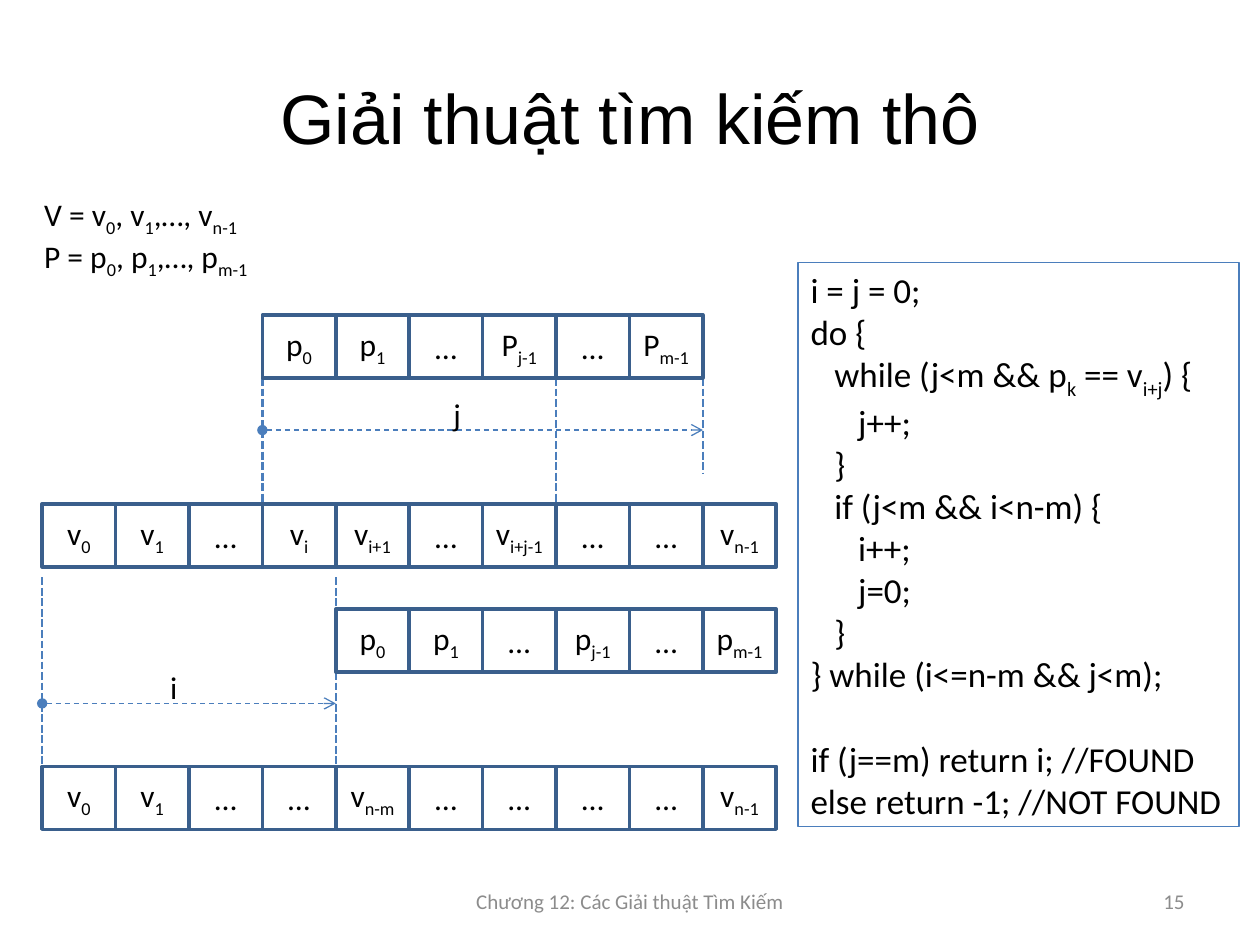
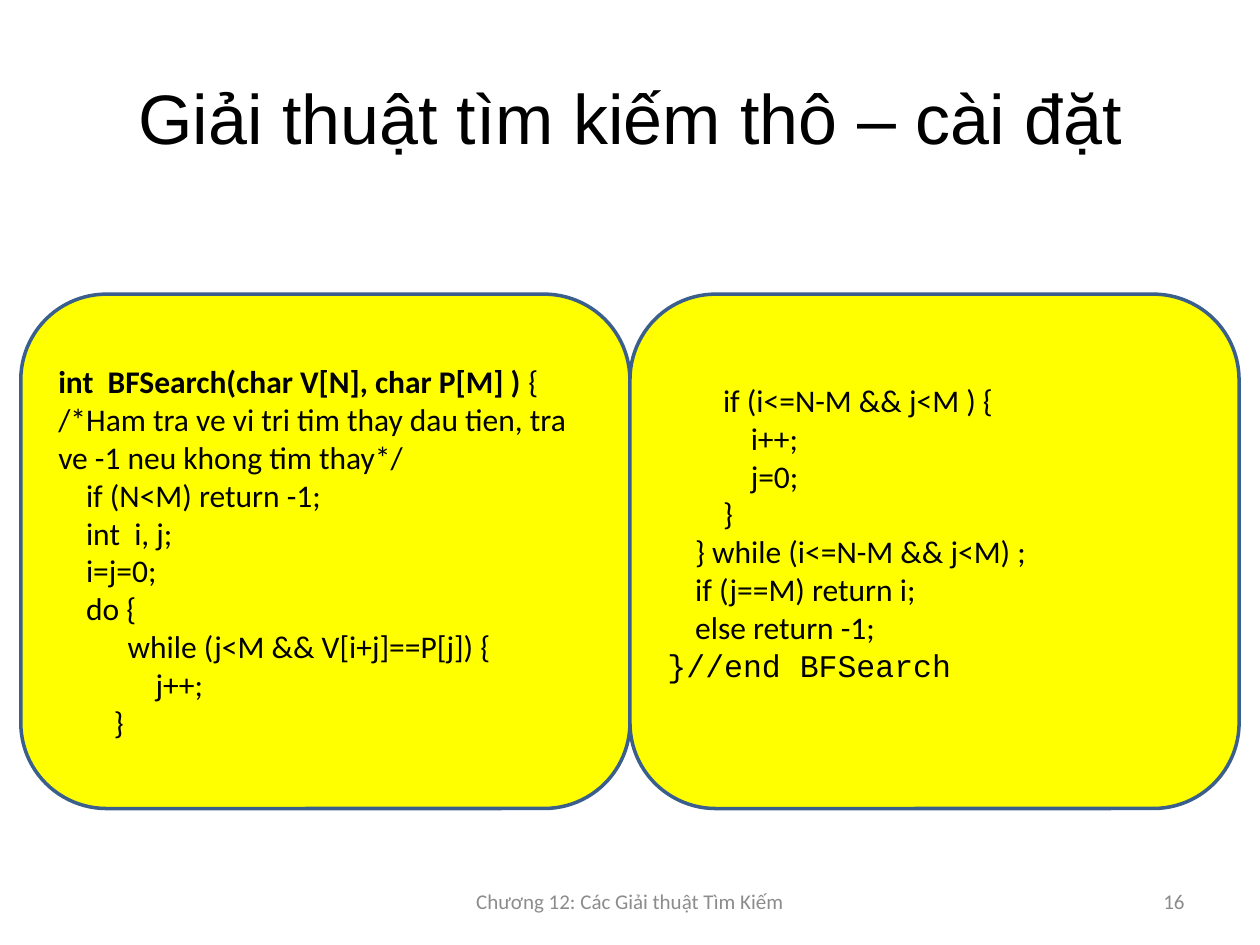
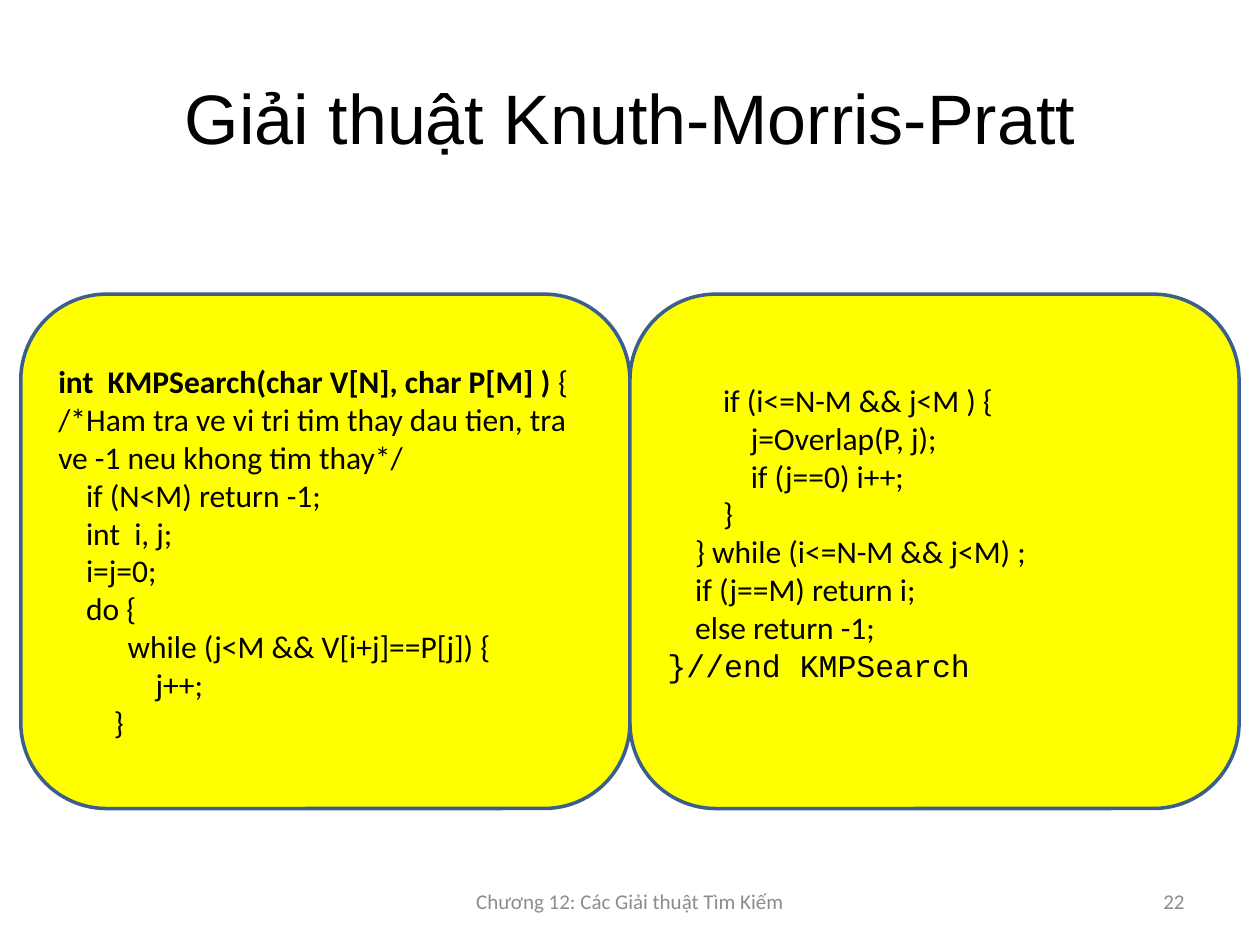
from dataclasses import dataclass

from lxml import etree
from pptx import Presentation
from pptx.dml.color import RGBColor
from pptx.enum import dml, shapes, text
from pptx.oxml import ns
from pptx.util import Cm, Pt


@dataclass(frozen=True)
class Theme:
    ink: str = "000000"
    muted: str = "8C8C8C"
    border: str = "3A5F8C"
    guide: str = "4B7EBC"
    panel: str = "FFFF00"
    title_font: str = "Arial"
    body_font: str = "Calibri"
    code_font: str = "Courier New"
    title_size: int = 40
    code_size: int = 20
    body_size: int = 18
    footer_size: int = 12


T = Theme()
LEFT, CENTER, RIGHT = text.PP_ALIGN.LEFT, text.PP_ALIGN.CENTER, text.PP_ALIGN.RIGHT
TOP, MIDDLE = text.MSO_ANCHOR.TOP, text.MSO_ANCHOR.MIDDLE
DASH, SYS_DASH = dml.MSO_LINE.DASH, dml.MSO_LINE.SQUARE_DOT

# Content: text between ~ marks is subscript, code lines are (indent, text)
FOOTER = "Chương 12: Các Giải thuật Tìm Kiếm"
DEFINITIONS = ["V = v~0~, v~1~,…, v~n-1~", "P = p~0~, p~1~,…, p~m-1~"]

# Array rows: (first column, top, cells)
ARRAYS = [
    (3, 6.35, ["p~0~", "p~1~", "…", "P~j-1~", "…", "P~m-1~"]),
    (0, 10.16, ["v~0~", "v~1~", "…", "v~i~", "v~i+1~", "…", "v~i+j-1~", "…", "…", "v~n-1~"]),
    (4, 12.28, ["p~0~", "p~1~", "…", "p~j-1~", "…", "p~m-1~"]),
    (0, 15.45, ["v~0~", "v~1~", "…", "…", "v~n-m~", "…", "…", "…", "…", "v~n-1~"]),
]
# Guides: (column, top, bottom); spans: (from column, to column, y)
GUIDES = [(3, 7.62, 10.16), (7, 7.62, 10.16), (9, 7.62, 9.53),
          (0, 11.64, 15.45), (4, 11.64, 15.45)]
SPANS = [(3, 9, 8.67), (0, 4, 14.18)]
SPAN_LABELS = [("j", 8.89, 7.83), ("i", 3.18, 13.34)]

PSEUDOCODE = [
    (0, "i = j = 0;"), (0, "do {"),
    (3, "while (j<m && p~k~ == v~i+j~) {"), (6, "j++;"), (3, "}"),
    (3, "if (j<m && i<n-m) {"), (6, "i++;"), (6, "j=0;"), (3, "}"),
    (0, "} while (i<=n-m && j<m);"),
]
RESULT = [(0, "if (j==m) return i; //FOUND"), (0, "else return -1; //NOT FOUND")]

SEARCH_START = [
    (0, "/*Ham tra ve vi tri tim thay dau tien, tra ve -1 neu khong tim thay*/"),
    (4, "if (N<M) return -1;"), (4, "int  i, j;"), (4, "i=j=0;"), (4, "do {"),
    (10, "while (j<M && V[i+j]==P[j]) {"), (14, "j++;"), (8, "}"),
]
SEARCH_END = [(8, "}"), (4, "} while (i<=N-M && j<M) ;"),
              (4, "if (j==M) return i;"), (4, "else return -1;")]
# Code slides: (title, number, function, lines that shift the pattern)
SEARCHES = [
    ("Giải thuật tìm kiếm thô – cài đặt", 16, "BFSearch", ["i++;", "j=0;"]),
    ("Giải thuật Knuth-Morris-Pratt", 22, "KMPSearch",
     ["j=Overlap(P, j);", "if (j==0) i++;"]),
]

# Layout in centimetres
COL_X, CELL_W, CELL_H = 0.85, 1.48, 1.27
PANEL_X, PANEL_Y, PANEL_W, PANEL_H = 0.42, 5.93, 12.28, 10.37
INDENT = {T.body_size: 0.14, T.code_size: 0.16}
BLANK_LINE = {T.body_size: 0.77, T.code_size: 0.86}


def column(n):
    return COL_X + n * CELL_W


# Text helpers
def add_run(p, words, size, color=T.ink, font=T.body_font, bold=False, sub=False):
    r = p.add_run()
    r.text = words
    for name, value in dict(size=Pt(size), name=font, bold=bold).items():
        setattr(r.font, name, value)
    r.font.color.rgb = RGBColor.from_string(color)
    if sub:
        r._r.get_or_add_rPr().set("baseline", "-25000")


def add_marked(p, marked, size, **fmt):
    for n, part in enumerate(marked.split("~")):
        if part:
            add_run(p, part, size, sub=n % 2 == 1, **fmt)


def next_paragraph(tf, align=LEFT):
    p = tf.paragraphs[0] if not tf.paragraphs[0].runs else tf.add_paragraph()
    p.alignment = align
    return p


def write_code(tf, lines, size):
    for indent, line in lines:
        p = next_paragraph(tf)
        p._p.get_or_add_pPr().set("marL", str(Cm(indent * INDENT[size])))
        add_marked(p, line, size)


def add_text(s, box, words, size=T.body_size, align=LEFT, anchor=TOP, **fmt):
    tf = s.shapes.add_textbox(*map(Cm, box)).text_frame
    tf.word_wrap, tf.vertical_anchor = True, anchor
    add_marked(next_paragraph(tf, align), words, size, **fmt)


# Shape helpers
def add_box(s, box, kind=shapes.MSO_SHAPE.RECTANGLE, fill=None, line=T.border,
            width=2, anchor=MIDDLE):
    sp = s.shapes.add_shape(kind, *map(Cm, box))
    sp.shadow.inherit = False
    if fill:
        sp.fill.solid()
        sp.fill.fore_color.rgb = RGBColor.from_string(fill)
    else:
        sp.fill.background()
    sp.line.color.rgb = RGBColor.from_string(line)
    sp.line.width = Pt(width)
    sp.text_frame.word_wrap, sp.text_frame.vertical_anchor = True, anchor
    return sp


def add_line(s, x1, y1, x2, y2, width, dash, ends=()):
    c = s.shapes.add_connector(shapes.MSO_CONNECTOR.STRAIGHT, *map(Cm, (x1, y1, x2, y2)))
    c.line.color.rgb = RGBColor.from_string(T.guide)
    c.line.width, c.line.dash_style = Pt(width), dash
    for tag, kind in ends:
        etree.SubElement(c.line._get_or_add_ln(), ns.qn(tag), type=kind)
    etree.SubElement(c._element.spPr, ns.qn("a:effectLst"))


# Title and footer shared by all slides
def new_slide(prs, title, number):
    s = prs.slides.add_slide(prs.slide_layouts[5])
    sp = s.shapes.title
    sp.left, sp.top, sp.width, sp.height = map(Cm, (1.27, 0.76, 22.86, 3.18))
    sp.text_frame.vertical_anchor = MIDDLE
    add_run(next_paragraph(sp.text_frame, CENTER), title, T.title_size, font=T.title_font)
    for box, words, align in [((8.68, 17.66, 8.04, 1.01), FOOTER, CENTER),
                              ((18.2, 17.66, 5.93, 1.01), str(number), RIGHT)]:
        add_text(s, box, words, T.footer_size, align, MIDDLE, color=T.muted)
    return s


def diagram_slide(prs):
    s = new_slide(prs, "Giải thuật tìm kiếm thô", 15)
    for n, words in enumerate(DEFINITIONS):
        add_text(s, (0.64, 3.81 + n * 0.85, 5.08, 1.06), words)

    # Guides and measured spans
    for col, top, bottom in GUIDES:
        add_line(s, column(col), top, column(col), bottom, 1.5, SYS_DASH)
    for start, end, y in SPANS:
        add_line(s, column(start), y, column(end), y, 0.75, DASH,
                 [("a:headEnd", "oval"), ("a:tailEnd", "arrow")])

    # Array cells
    for first, top, cells in ARRAYS:
        for n, words in enumerate(cells, first):
            tf = add_box(s, (column(n), top, CELL_W, CELL_H)).text_frame
            for side in ("left", "top", "right", "bottom"):
                setattr(tf, f"margin_{side}", 0)
            add_marked(next_paragraph(tf, CENTER), words, T.body_size)
    for words, x, y in SPAN_LABELS:
        add_text(s, (x, y, 1.06, 1.02), words)

    # Pseudocode
    tf = add_box(s, (16.09, 5.29, 8.89, 11.38), line=T.guide, width=0.75,
                 anchor=TOP).text_frame
    write_code(tf, PSEUDOCODE + RESULT, T.code_size)
    tf.paragraphs[len(PSEUDOCODE)].space_before = Cm(BLANK_LINE[T.code_size])


def code_slide(prs, title, number, name, shift):
    s = new_slide(prs, title, number)
    start, end = [
        add_box(s, (PANEL_X + n * PANEL_W, PANEL_Y, PANEL_W, PANEL_H),
                shapes.MSO_SHAPE.ROUNDED_RECTANGLE, T.panel).text_frame
        for n in range(2)]

    p = next_paragraph(start)
    add_run(p, f"int  {name}(char V[N], char P[M] ) ", T.body_size, bold=True)
    add_run(p, "{", T.body_size)
    write_code(start, SEARCH_START, T.body_size)

    end.margin_bottom += Cm(BLANK_LINE[T.body_size])
    lines = [(8, "if (i<=N-M && j<M ) {")] + [(12, line) for line in shift]
    write_code(end, lines + SEARCH_END, T.body_size)
    add_run(next_paragraph(end), f"}}//end {name}", T.body_size, font=T.code_font)


def main():
    prs = Presentation()
    prs.slide_width, prs.slide_height = Cm(25.4), Cm(19.05)
    diagram_slide(prs)
    for search in SEARCHES:
        code_slide(prs, *search)
    prs.save("out.pptx")


if __name__ == "__main__":
    main()
